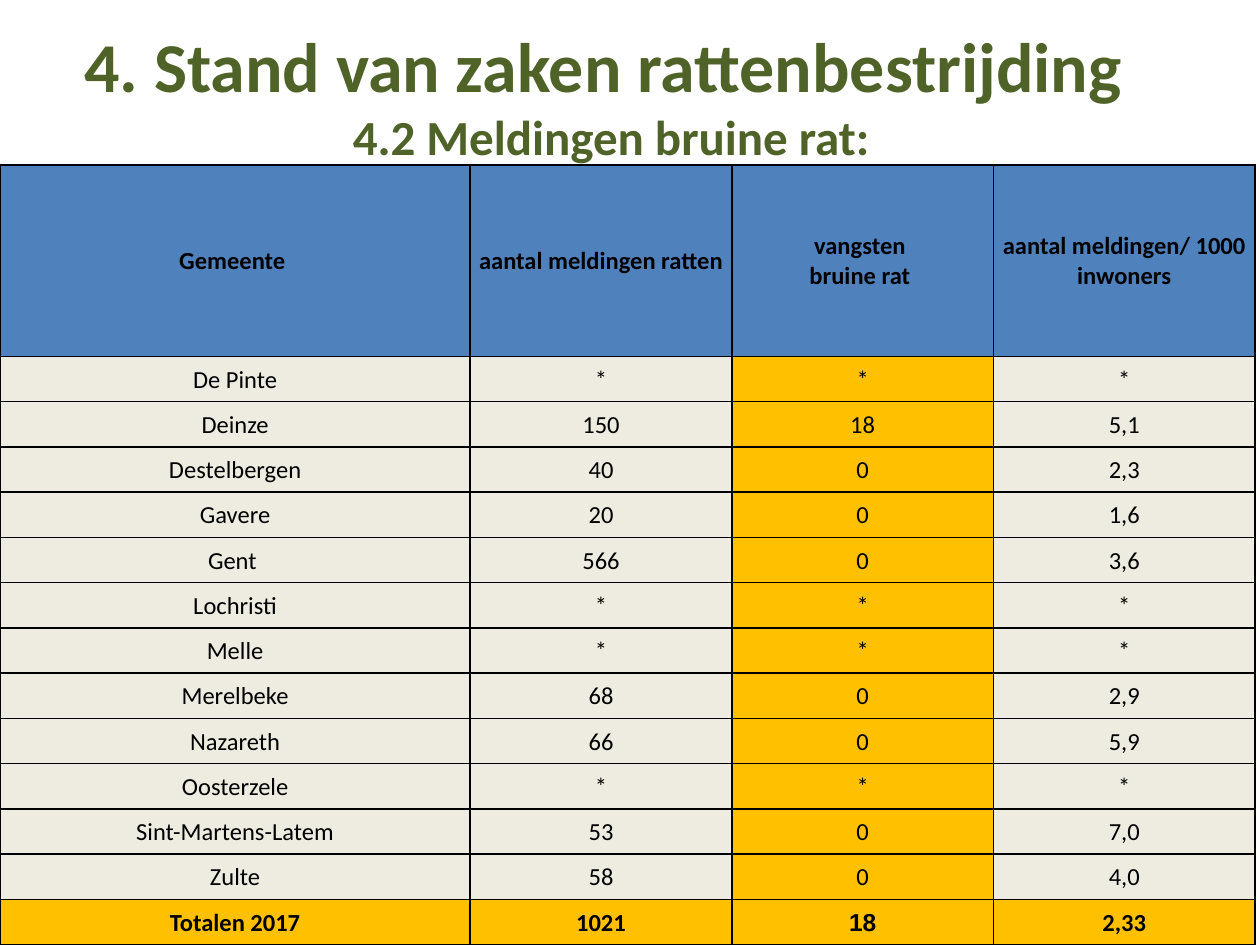
from pptx import Presentation
from pptx.dml.color import RGBColor
from pptx.enum.text import MSO_ANCHOR, MSO_AUTO_SIZE, PP_ALIGN
from pptx.oxml import parse_xml
from pptx.oxml.ns import nsdecls
from pptx.util import Pt

COLORS = {
    "title": "4F6228",
    "text": "000000",
    "border": "000000",
    "header": "4F81BD",
    "body": "EEECE1",
    "accent": "FFC000",
}

TITLE_LINES = [("4. Stand van zaken rattenbestrijding ", 40), ("4.2 Meldingen bruine rat:", 28)]

HEADERS = ["Gemeente ", "aantal meldingen ratten", "vangsten \nbruine rat ",
           "aantal meldingen/ 1000 inwoners"]
REPORTS = [
    ["De Pinte", "*", "*", "*"],
    ["Deinze", "150", "18", "5,1"],
    ["Destelbergen", "40", "0", "2,3"],
    ["Gavere", "20", "0", "1,6"],
    ["Gent ", "566", "0", "3,6"],
    ["Lochristi", "*", "*", "*"],
    ["Melle", "*", "*", "*"],
    ["Merelbeke", "68", "0", "2,9"],
    ["Nazareth", "66", "0", "5,9"],
    ["Oosterzele", "*", "*", "*"],
    ["Sint-Martens-Latem", "53", "0", "7,0"],
    ["Zulte", "58", "0", "4,0"],
]
TOTALS = ["Totalen 2017", "1021", "18", "2,33"]
CATCH_COLUMN = 2

CELL_FORMAT = {
    "vertical_anchor": MSO_ANCHOR.MIDDLE,
    "margin_left": Pt(0.75),
    "margin_right": Pt(0.75),
    "margin_top": Pt(0.75),
    "margin_bottom": Pt(0),
}
TITLE_FORMAT = {
    "vertical_anchor": MSO_ANCHOR.TOP,
    "auto_size": MSO_AUTO_SIZE.NONE,
    "word_wrap": True,
}


def apply_format(target, values):
    for name, value in values.items():
        setattr(target, name, value)


def format_paragraph(paragraph, size, color, bold, font_name="Calibri"):
    paragraph.alignment = PP_ALIGN.CENTER
    apply_format(paragraph.font, {"name": font_name, "size": Pt(size), "bold": bold})
    paragraph.font.color.rgb = RGBColor.from_string(COLORS[color])


def add_borders(cell):
    properties = cell._tc.get_or_add_tcPr()
    for side in ("lnL", "lnR", "lnT", "lnB"):
        properties.append(parse_xml(
            f'<a:{side} {nsdecls("a")} w="{Pt(1)}"><a:solidFill>'
            f'<a:srgbClr val="{COLORS["border"]}"/></a:solidFill></a:{side}>'))


def fill_cell(cell, text, fill, bold, font_name):
    apply_format(cell, CELL_FORMAT)
    add_borders(cell)
    cell.fill.solid()
    cell.fill.fore_color.rgb = RGBColor.from_string(COLORS[fill])
    cell.text = text
    for paragraph in cell.text_frame.paragraphs:
        format_paragraph(paragraph, 14, "text", bold, font_name)


def place_title(slide, left, top, width, height):
    title = slide.shapes.title
    apply_format(title, {"left": left, "top": top, "width": width, "height": height})
    frame = title.text_frame
    apply_format(frame, TITLE_FORMAT)
    frame.text = "\n".join(text for text, size in TITLE_LINES)
    for paragraph, (text, size) in zip(frame.paragraphs, TITLE_LINES):
        format_paragraph(paragraph, size, "title", True)


def place_table(slide, left, top, width, height):
    rows = [HEADERS, *REPORTS, TOTALS]
    last = len(rows) - 1
    table = slide.shapes.add_table(len(rows), len(HEADERS), left, top, width, height).table

    # The first column and the header row take what the equal ones leave
    value_width, row_height = Pt(149.5), Pt(25.87)
    for index, column in enumerate(table.columns):
        column.width = value_width if index else width - value_width * (len(HEADERS) - 1)
    for index, row in enumerate(table.rows):
        row.height = row_height if index else height - row_height * last

    for row_index, texts in enumerate(rows):
        for column_index, text in enumerate(texts):
            is_catch = column_index == CATCH_COLUMN
            is_total = row_index == last
            if row_index == 0:
                fill = "header"
            else:
                fill = "accent" if is_total or is_catch else "body"
            font_name = "Arial" if is_total and is_catch else "Calibri"
            fill_cell(table.cell(row_index, column_index), text, fill,
                      row_index in (0, last), font_name)


def main():
    presentation = Presentation()
    presentation.slide_width, presentation.slide_height = Pt(720), Pt(540)
    slide = presentation.slides.add_slide(presentation.slide_layouts[5])

    # Heading, then the reports per municipality
    place_title(slide, Pt(25.2), Pt(9.4), Pt(648), Pt(390))
    place_table(slide, Pt(0), Pt(94.3), Pt(717.2), Pt(445.7))
    presentation.save("out.pptx")


if __name__ == "__main__":
    main()
